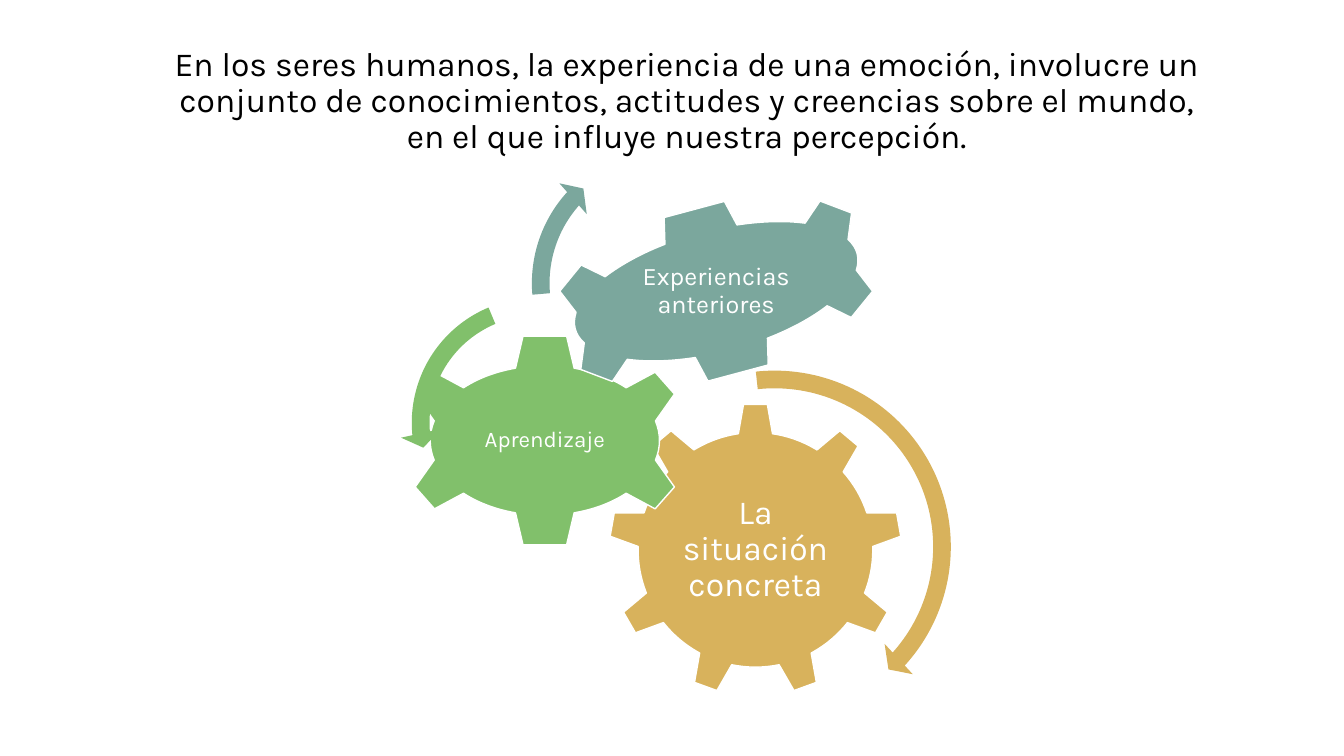
from dataclasses import dataclass

from pptx import Presentation
from pptx.dml.color import RGBColor
from pptx.enum.shapes import MSO_SHAPE
from pptx.enum.text import MSO_ANCHOR, MSO_AUTO_SIZE, PP_ALIGN
from pptx.shapes.autoshape import Shape
from pptx.slide import Slide
from pptx.text.text import TextFrame
from pptx.util import Inches, Pt

WIDTH, HEIGHT = Inches(13.33), Inches(7.5)
FONT = "Karla"
BLACK = RGBColor(0x00, 0x00, 0x00)
WHITE = RGBColor(0xFF, 0xFF, 0xFF)
GOLD = RGBColor(0xD8, 0xB2, 0x5C)
GREEN = RGBColor(0x81, 0xC0, 0x6B)
TEAL = RGBColor(0x7B, 0xA7, 0x9D)

STATEMENT = (
    "En los seres humanos, la experiencia de una emoción, involucre un "
    "conjunto de conocimientos, actitudes y creencias sobre el mundo, "
    "en el que influye nuestra percepción."
)


@dataclass(frozen=True)
class Area:
    """Centre and size, in percent of the slide's width and height."""

    x: float
    y: float
    width: float
    height: float

    def box(self) -> tuple[int, int, int, int]:
        width = round(WIDTH * self.width / 100)
        height = round(HEIGHT * self.height / 100)
        left = round(WIDTH * self.x / 100 - width / 2)
        top = round(HEIGHT * self.y / 100 - height / 2)
        return left, top, width, height


@dataclass(frozen=True)
class Gear:
    kind: MSO_SHAPE
    area: Area
    color: RGBColor
    label: str
    label_width: float
    label_height: float
    size: int
    rotation: int = 0


@dataclass(frozen=True)
class TurnArrow:
    kind: MSO_SHAPE
    area: Area
    color: RGBColor
    adjustments: tuple[float, ...]


GEARS = (
    Gear(MSO_SHAPE.GEAR_9, Area(56.21, 72.73, 21.83, 38.8), GOLD,
         "La situación concreta", 13.05, 20, 24),
    Gear(MSO_SHAPE.GEAR_6, Area(40.54, 58.27, 21.83, 28.27), GREEN,
         "Aprendizaje", 12.15, 14, 16),
    Gear(MSO_SHAPE.GEAR_6, Area(53.29, 38.53, 25.58, 22.93), TEAL,
         "Experiencias anteriores", 12.83, 15.6, 18, rotation=345),
)

TURN_ARROWS = (
    TurnArrow(MSO_SHAPE.CIRCULAR_ARROW, Area(57.64, 72.33, 27.98, 49.73), GOLD,
              (0.047, 2.99, 25.297, 158.323, 0.055)),
    TurnArrow(MSO_SHAPE.LEFT_CIRCULAR_ARROW, Area(39.94, 55.93, 20.33, 36.13), GREEN,
              (0.065, 4.3, 104.891, 148.378, 0.075)),
    TurnArrow(MSO_SHAPE.CIRCULAR_ARROW, Area(49.65, 37.47, 21.9, 38.93), TEAL,
              (0.06, 3.941, 133.138, 105.082, 0.07)),
)


def write(frame: TextFrame, text: str, size: int, color: RGBColor,
          anchor: MSO_ANCHOR) -> None:
    frame.word_wrap = True
    frame.auto_size = MSO_AUTO_SIZE.NONE
    frame.vertical_anchor = anchor
    paragraph = frame.paragraphs[0]
    paragraph.text = text
    paragraph.alignment = PP_ALIGN.CENTER
    paragraph.line_spacing = 0.9
    paragraph.font.name = FONT
    paragraph.font.size = Pt(size)
    paragraph.font.color.rgb = color


def add_statement(slide: Slide) -> None:
    title = slide.shapes.title
    area = Area(51.1, 29.8, 78.77, 48.4)
    title.left, title.top, title.width, title.height = area.box()
    write(title.text_frame, STATEMENT, 24, BLACK, MSO_ANCHOR.TOP)


def add_filled(slide: Slide, kind: MSO_SHAPE, area: Area, color: RGBColor) -> Shape:
    shape = slide.shapes.add_shape(kind, *area.box())
    shape.shadow.inherit = False
    shape.fill.solid()
    shape.fill.fore_color.rgb = color
    return shape


def add_gear(slide: Slide, gear: Gear) -> None:
    wheel = add_filled(slide, gear.kind, gear.area, gear.color)
    wheel.rotation = gear.rotation
    wheel.line.color.rgb = WHITE
    wheel.line.width = Pt(1)

    # The label stays upright at the centre of the wheel
    label_area = Area(gear.area.x, gear.area.y, gear.label_width, gear.label_height)
    frame = slide.shapes.add_textbox(*label_area.box()).text_frame
    frame.margin_left = frame.margin_right = Inches(0.03)
    frame.margin_top = frame.margin_bottom = Inches(0.03)
    write(frame, gear.label, gear.size, WHITE, MSO_ANCHOR.MIDDLE)


def add_turn_arrow(slide: Slide, arrow: TurnArrow) -> None:
    shape = add_filled(slide, arrow.kind, arrow.area, arrow.color)
    shape.line.fill.background()
    for index, value in enumerate(arrow.adjustments):
        shape.adjustments[index] = value


def main() -> None:
    presentation = Presentation()
    presentation.slide_width, presentation.slide_height = WIDTH, HEIGHT
    slide = presentation.slides.add_slide(presentation.slide_layouts[5])

    # Statement above the gears
    add_statement(slide)

    # Three meshing gears with their labels
    for gear in GEARS:
        add_gear(slide, gear)

    # Arrows showing how each gear turns
    for arrow in TURN_ARROWS:
        add_turn_arrow(slide, arrow)

    presentation.save("out.pptx")


if __name__ == "__main__":
    main()
